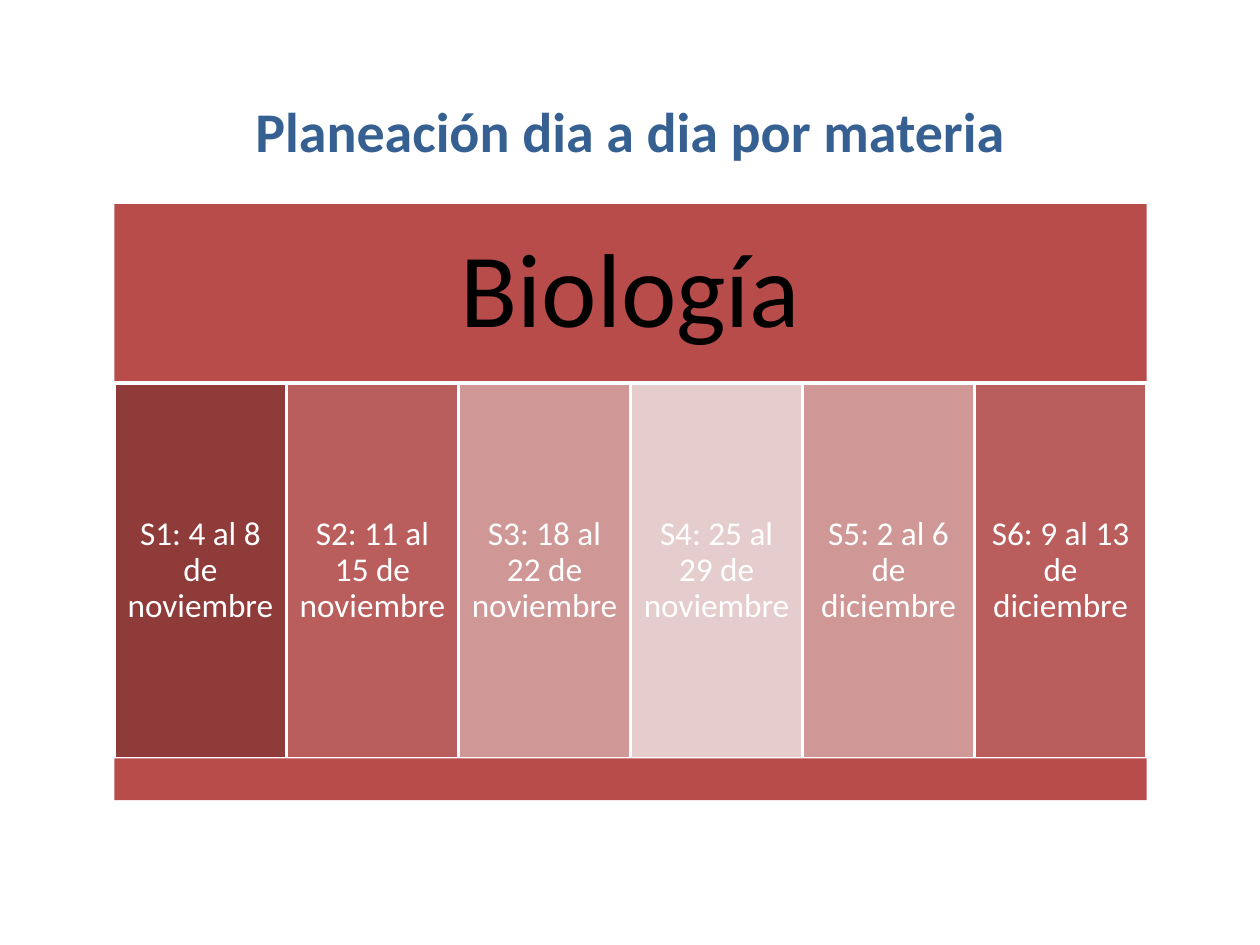
"""Build the weekly planning slide for Biología."""
import pptx
import pptx.dml.color
import pptx.enum.shapes
import pptx.enum.text
import pptx.util

Pt = pptx.util.Pt
COLORS = {
    "title": "376092", "band": "B74C4A", "dark": "8E3B39", "medium": "B95E5C",
    "light": "CF9796", "pale": "E6CDCD", "white": "FFFFFF", "black": "000000",
}
LEFT, WIDTH = 65.4, 589.8
HEADER_TOP, WEEKS_TOP, FOOTER_TOP, BOTTOM = 116.6, 218.9, 433.4, 457.2
WEEKS = [
    ("S1: 4 al 8 de noviembre", "dark"),
    ("S2: 11 al 15 de noviembre", "medium"),
    ("S3: 18 al 22 de noviembre", "light"),
    ("S4: 25 al 29 de noviembre", "pale"),
    ("S5: 2 al 6 de diciembre", "light"),
    ("S6: 9 al 13 de diciembre", "medium"),
]


def rgb(name):
    return pptx.dml.color.RGBColor.from_string(COLORS[name])


def write(box, text, size, color, inset, bold=False, spacing=0.9):
    frame = box.text_frame
    frame.word_wrap = True
    frame.auto_size = pptx.enum.text.MSO_AUTO_SIZE.NONE
    frame.vertical_anchor = pptx.enum.text.MSO_ANCHOR.MIDDLE
    frame.margin_left = frame.margin_right = Pt(inset)
    frame.margin_top = frame.margin_bottom = Pt(inset)
    para = frame.paragraphs[0]
    para.alignment = pptx.enum.text.PP_ALIGN.CENTER
    para.line_spacing = spacing
    span = para.add_run()
    span.text = text
    span.font.name = "Calibri"
    span.font.size = Pt(size)
    span.font.bold = bold
    span.font.color.rgb = rgb(color)


deck = pptx.Presentation()
deck.slide_width, deck.slide_height = Pt(720), Pt(540)
page = deck.slides.add_slide(deck.slide_layouts[5])

title = page.shapes.title
title.left, title.top, title.width, title.height = Pt(LEFT), Pt(49), Pt(WIDTH), Pt(51)
title.fill.solid()
title.fill.fore_color.rgb = rgb("white")
write(title, "Planeación dia a dia por materia", 32, "title", 4, bold=True, spacing=1)

column = WIDTH / len(WEEKS)
blocks = [(LEFT, HEADER_TOP, WIDTH, WEEKS_TOP, "band", "Biología", 60, "black", 18)]
for index, (label, color) in enumerate(WEEKS):
    blocks.append((LEFT + index * column, WEEKS_TOP, column, FOOTER_TOP, color, label, 19, "white", 5.76))
blocks.append((LEFT, FOOTER_TOP, WIDTH, BOTTOM, "band", "", 0, "white", 0))

for left, top, width, bottom, fill, text, size, ink, inset in blocks:
    box = page.shapes.add_shape(
        pptx.enum.shapes.MSO_SHAPE.RECTANGLE, Pt(left), Pt(top), Pt(width), Pt(bottom - top))
    box.shadow.inherit = False
    box.fill.solid()
    box.fill.fore_color.rgb = rgb(fill)
    if fill == "band":
        box.line.fill.background()
    else:
        box.line.color.rgb = rgb("white")
        box.line.width = Pt(2)
    if text:
        write(box, text, size, ink, inset)

deck.save("out.pptx")
